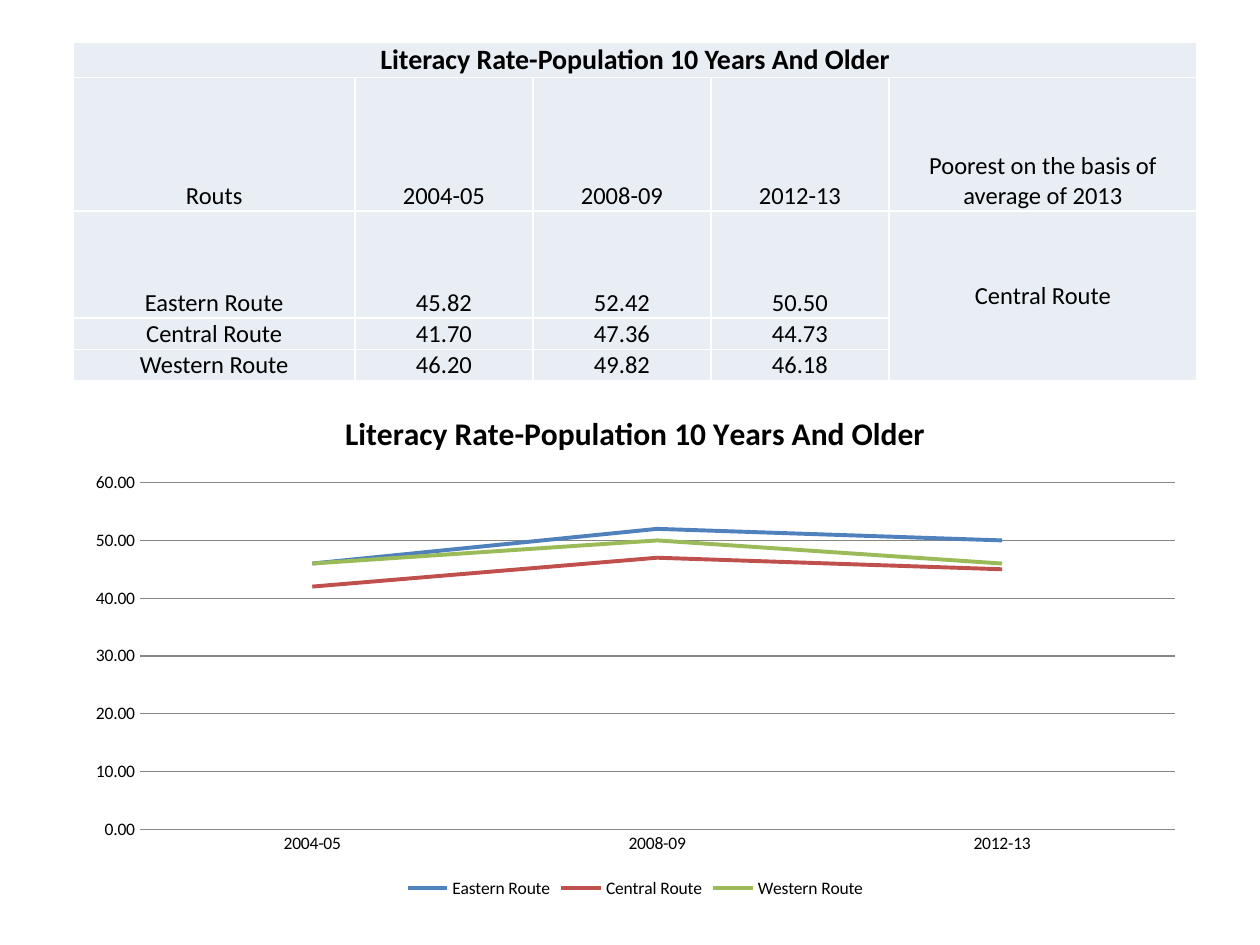
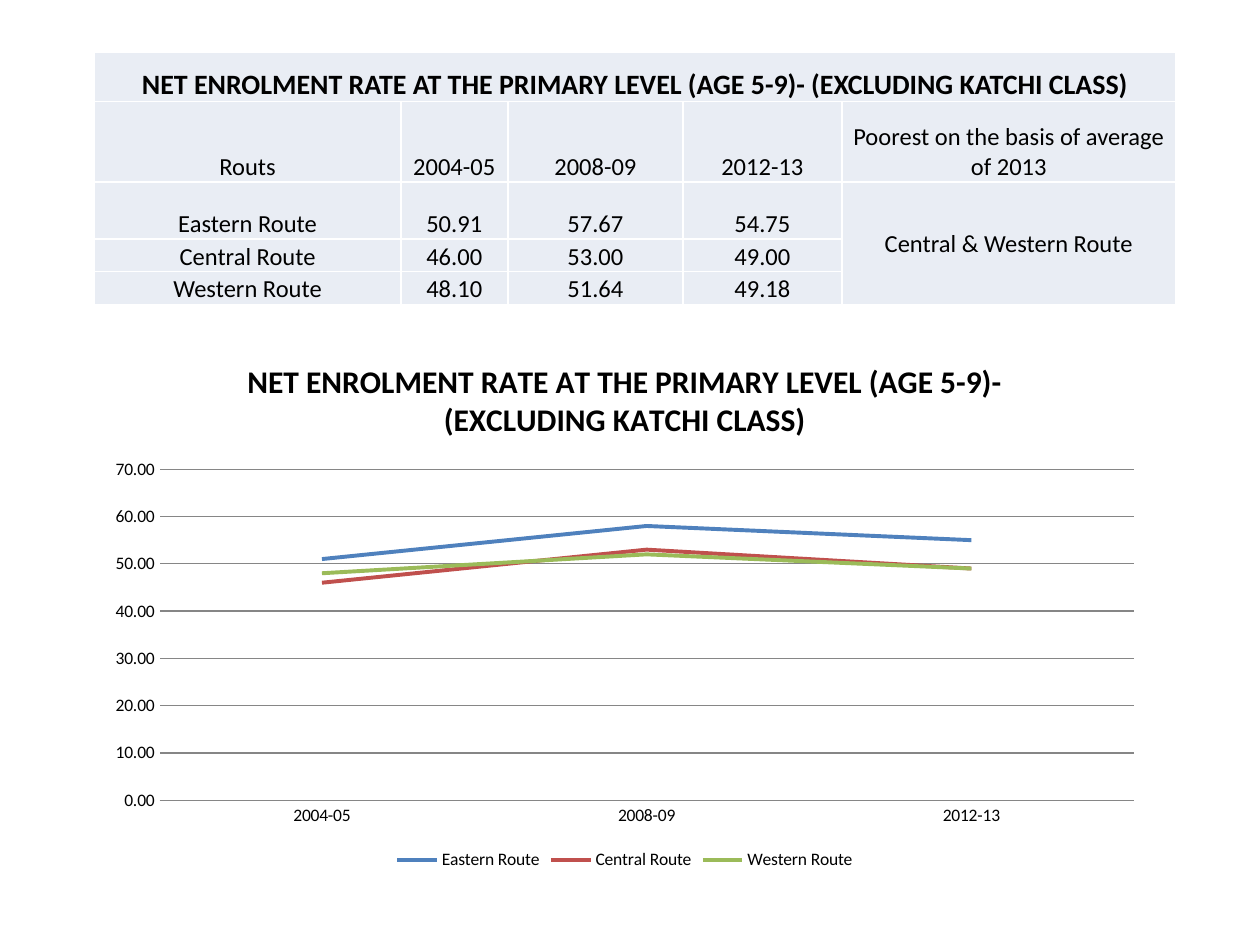
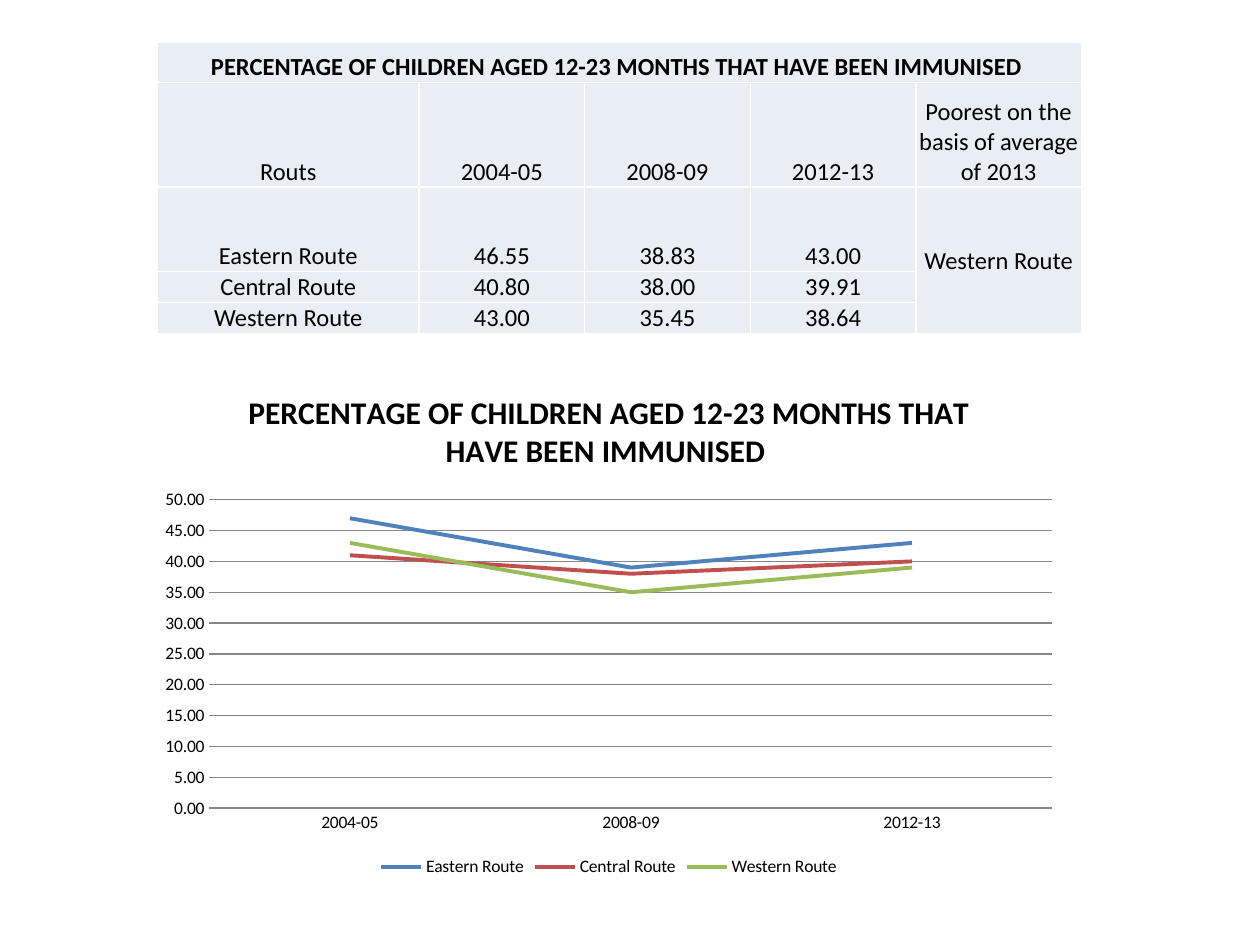
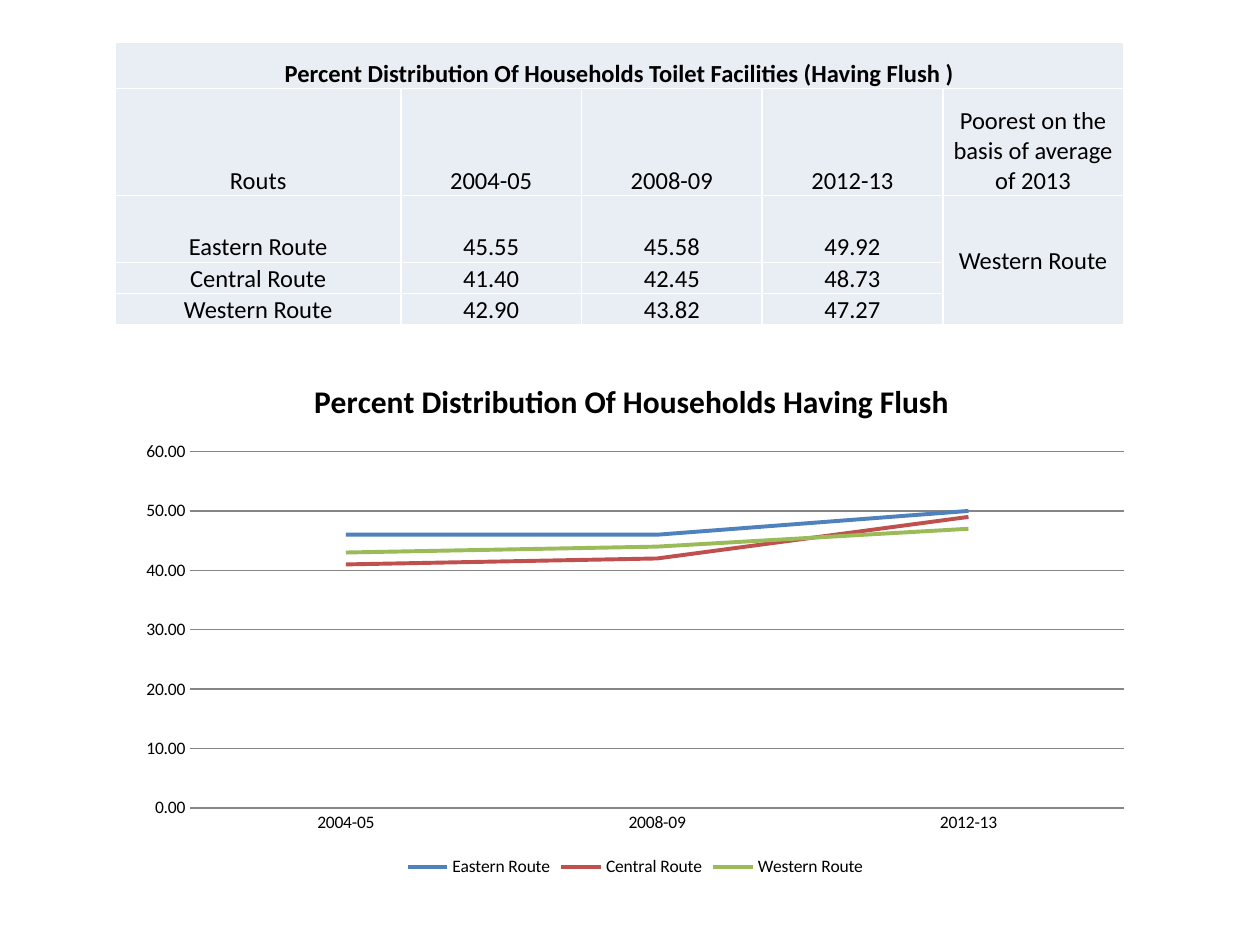
from lxml.etree import SubElement
from pptx import Presentation
from pptx.chart.data import CategoryChartData
from pptx.dml.color import RGBColor
from pptx.enum.chart import (XL_CHART_TYPE as ChartType, XL_LEGEND_POSITION as LegendSpot,
                             XL_TICK_MARK as Tick)
from pptx.enum.text import MSO_ANCHOR as Anchor, PP_ALIGN as Align
from pptx.oxml.ns import qn
from pptx.util import Inches, Pt

# Shared look
FONT = "Calibri"
BLACK, WHITE, CELL_FILL, GRID_GREY = "000000", "FFFFFF", "E9EDF4", "868686"
ROUTES = {"Eastern Route": "4F81BD", "Central Route": "C0504D", "Western Route": "9BBB59"}
YEARS = ["2004-05", "2008-09", "2012-13"]
HEADINGS = ["Routs", *YEARS, "Poorest on the basis of average of 2013"]
CELL_INSETS = {"margin_left": Inches(0.01), "margin_right": Inches(0.01),
               "margin_top": Inches(0.01), "margin_bottom": 0}

# The slide is a grid of 120 columns by 90 rows
SLIDE_WIDTH, SLIDE_HEIGHT = Inches(10), Inches(7.5)
UNIT = SLIDE_WIDTH // 120

# Boxes are (column, row, columns, rows); rates follow the order of ROUTES and YEARS
INDICATORS = [
    {"heading": "Literacy Rate-Population 10 Years And Older",
     "chart_title": "Literacy Rate-Population 10 Years And Older",
     "heading_size": 16, "poorest": "Central Route",
     "table_box": (7, 4, 107, 32), "chart_box": (7, 37, 107, 49),
     "widths": [2.23, 1.41, 1.41, 1.41, 2.44], "heights": [0.24, 1.06, 0.85, 0.21, 0.21],
     "rates": [[45.82, 52.42, 50.50], [41.70, 47.36, 44.73], [46.20, 49.82, 46.18]]},
    {"heading": "NET ENROLMENT RATE AT THE PRIMARY LEVEL (AGE 5-9)- (EXCLUDING KATCHI CLASS)",
     "chart_title": "NET ENROLMENT RATE AT THE PRIMARY LEVEL (AGE 5-9)- (EXCLUDING KATCHI CLASS)",
     "heading_size": 16, "poorest": "Central & Western Route",
     "table_box": (9, 5, 103, 24), "chart_box": (9, 32, 101, 51.3),
     "widths": [2.43, 0.85, 1.39, 1.26, 2.65], "heights": [0.39, 0.64, 0.45, 0.26, 0.26],
     "rates": [[50.91, 57.67, 54.75], [46.00, 53.00, 49.00], [48.10, 51.64, 49.18]]},
    {"heading": "PERCENTAGE OF CHILDREN AGED 12-23 MONTHS THAT HAVE BEEN IMMUNISED ",
     "chart_title": "PERCENTAGE OF CHILDREN AGED 12-23 MONTHS THAT HAVE BEEN IMMUNISED ",
     "heading_size": 14, "poorest": "Western Route",
     "table_box": (15, 4, 88, 27.7), "chart_box": (14, 35, 88, 49),
     "widths": [2.07, 1.31, 1.31, 1.31, 1.31], "heights": [0.32, 0.83, 0.67, 0.17, 0.17],
     "rates": [[46.55, 38.83, 43.00], [40.80, 38.00, 39.91], [43.00, 35.45, 38.64]]},
    {"heading": "Percent Distribution Of Households Toilet Facilities (Having Flush )",
     "chart_title": "Percent Distribution Of Households Having Flush ",
     "heading_size": 14, "poorest": "Western Route",
     "table_box": (11, 4, 96, 26.9), "chart_box": (12, 34, 97, 50),
     "widths": [2.26, 1.43, 1.43, 1.43, 1.43], "heights": [0.37, 0.85, 0.53, 0.21, 0.21],
     "rates": [[45.55, 45.58, 49.92], [41.40, 42.45, 48.73], [42.90, 43.82, 47.27]]},
]


def color(hex_code):
    return RGBColor.from_string(hex_code)


def on_grid(box):
    return [round(steps * UNIT) for steps in box]


def set_all(target, values):
    for name, value in values.items():
        setattr(target, name, value)


def style_font(font, size, bold=False):
    set_all(font, {"name": FONT, "size": Pt(size), "bold": bold})
    font.color.rgb = color(BLACK)


def style_line(line, hex_code, width):
    line.color.rgb = color(hex_code)
    line.width = Pt(width)


def add_borders(cell):
    """White 1 pt rules on all four sides; they must precede the fill."""
    properties = cell._tc.get_or_add_tcPr()
    for side in ("a:lnL", "a:lnR", "a:lnT", "a:lnB"):
        rule = SubElement(properties, qn(side), w=str(Pt(1)))
        SubElement(SubElement(rule, qn("a:solidFill")), qn("a:srgbClr"), val=WHITE)


def style_cell(cell):
    add_borders(cell)
    cell.fill.solid()
    cell.fill.fore_color.rgb = color(CELL_FILL)
    set_all(cell, {**CELL_INSETS, "vertical_anchor": Anchor.BOTTOM})


def write_cell(cell, text, size=14, bold=False):
    paragraph = cell.text_frame.paragraphs[0]
    paragraph.alignment = Align.CENTER
    run = paragraph.add_run()
    run.text = text
    style_font(run.font, size, bold)


def add_rate_table(slide, indicator):
    box = on_grid(indicator["table_box"])
    widths, heights = indicator["widths"], indicator["heights"]
    table = slide.shapes.add_table(len(heights), len(widths), *box).table
    set_all(table, {"first_row": False, "horz_banding": False})
    for column, share in zip(table.columns, widths):
        column.width = round(box[2] * share / sum(widths))
    for row, height in zip(table.rows, heights):
        row.height = Inches(height)
    for cell in table.iter_cells():
        style_cell(cell)

    # Heading across the top, verdict down the right side
    heading, poorest = table.cell(0, 0), table.cell(2, 4)
    heading.merge(table.cell(0, 4))
    poorest.merge(table.cell(4, 4))
    write_cell(heading, indicator["heading"], indicator["heading_size"], bold=True)
    write_cell(poorest, indicator["poorest"])
    poorest.vertical_anchor = Anchor.MIDDLE

    # Column heads and one row for each route
    body = [HEADINGS] + [[route, *(f"{rate:.2f}" for rate in rates)]
                         for route, rates in zip(ROUTES, indicator["rates"])]
    for row, texts in enumerate(body, start=1):
        for column, text in enumerate(texts):
            write_cell(table.cell(row, column), text)


def style_axes(chart):
    years, rates = chart.category_axis, chart.value_axis
    for axis in (years, rates):
        set_all(axis, {"major_tick_mark": Tick.NONE, "minor_tick_mark": Tick.NONE})
        style_font(axis.tick_labels.font, 10)
    style_line(years.format.line, GRID_GREY, 0.75)
    rates.format.line.fill.background()
    rates.has_major_gridlines = True
    style_line(rates.major_gridlines.format.line, GRID_GREY, 0.75)
    set_all(rates.tick_labels, {"number_format": "0.00", "number_format_is_linked": False})


def add_trend_chart(slide, indicator):
    # The chart plots whole percentages
    trend = CategoryChartData(number_format="0.00")
    trend.categories = YEARS
    for route, rates in zip(ROUTES, indicator["rates"]):
        trend.add_series(route, [round(rate) for rate in rates])
    box = on_grid(indicator["chart_box"])
    chart = slide.shapes.add_chart(ChartType.LINE, *box, trend).chart
    style_font(chart.font, 10)
    set_all(chart, {"has_title": True, "has_legend": True})

    title = chart.chart_title.text_frame
    title.text = indicator["chart_title"]
    style_font(title.paragraphs[0].runs[0].font, 18, bold=True)
    set_all(chart.legend, {"position": LegendSpot.BOTTOM, "include_in_layout": False})
    style_font(chart.legend.font, 10)

    style_axes(chart)
    chart.plots[0].vary_by_categories = False
    for series, hex_code in zip(chart.plots[0].series, ROUTES.values()):
        series.smooth = False
        style_line(series.format.line, hex_code, 2.25)


def main():
    deck = Presentation()
    set_all(deck, {"slide_width": SLIDE_WIDTH, "slide_height": SLIDE_HEIGHT})
    for indicator in INDICATORS:
        slide = deck.slides.add_slide(deck.slide_layouts[6])
        add_rate_table(slide, indicator)
        add_trend_chart(slide, indicator)
    deck.save("out.pptx")


if __name__ == "__main__":
    main()
